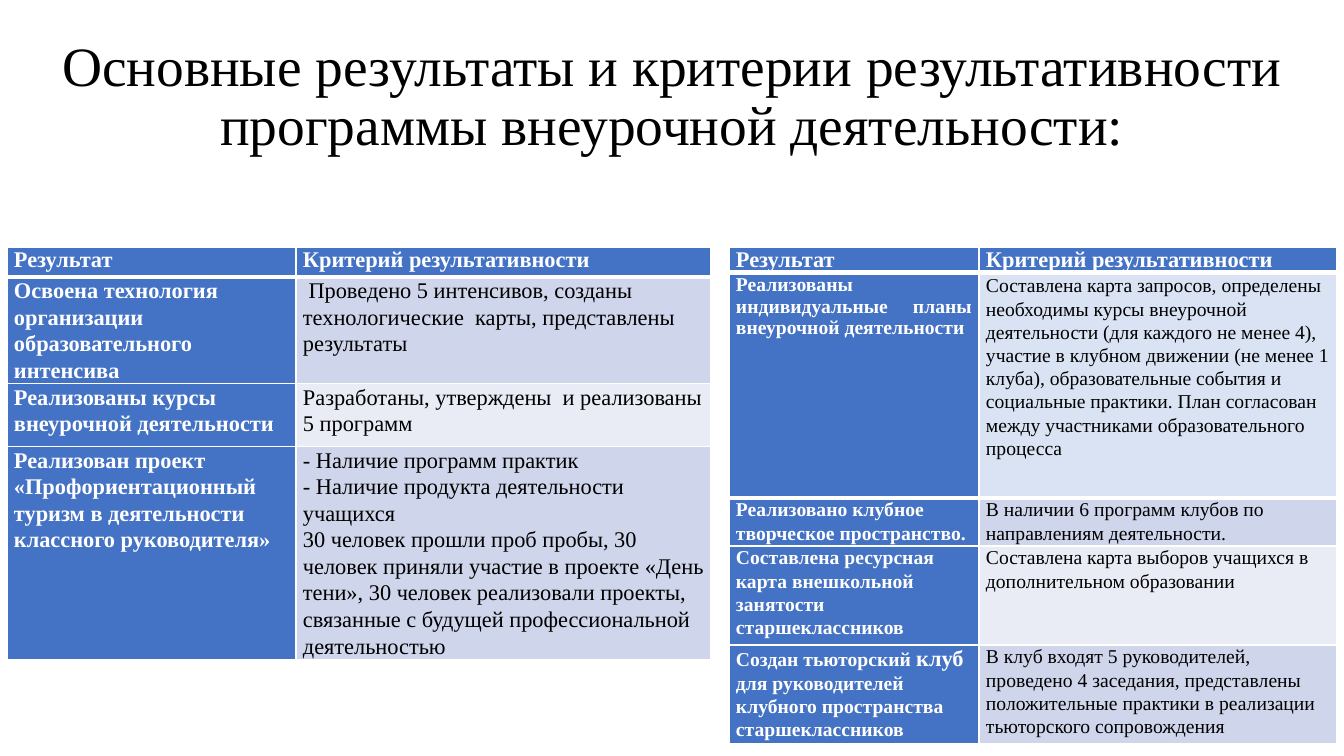
from dataclasses import dataclass

from lxml.etree import fromstring
from pptx import Presentation
from pptx.dml.color import RGBColor
from pptx.enum.text import MSO_ANCHOR, MSO_AUTO_SIZE, PP_ALIGN
from pptx.oxml.ns import nsdecls
from pptx.util import Emu, Pt

COLORS = {
    "white": "FFFFFF",
    "black": "000000",
    "accent": "4472C4",
    "band": "CFD5EA",
    "pale": "E9EBF5",
    "sky": "DAE3F3",
}
EMU_PER_PX = 914400 / 100.8


def px(length):
    return Emu(round(length * EMU_PER_PX))


@dataclass
class Row:
    """One result with its criterion; a "|" in the text encloses an enlarged word."""
    height: int
    result: str
    criterion: str
    shade: str
    heavy: bool = False
    justified: tuple = ()


def header(height):
    return Row(height, "Результат ", "Критерий результативности ", "accent",
               heavy=True, justified=(0, 1))


class SlideBuilder:
    font = "Times New Roman"
    enlarged = 16

    def __init__(self, width, height):
        self.deck = Presentation()
        self.deck.slide_width, self.deck.slide_height = px(width), px(height)
        self.slide = self.deck.slides.add_slide(self.deck.slide_layouts[5])

    def style_run(self, run, size, color, bold=False):
        run.font.name = self.font
        run.font.size = Pt(size)
        run.font.bold = bold
        run.font.color.rgb = RGBColor.from_string(COLORS[color])

    def title(self, left, top, width, height, wording, size):
        heading = self.slide.shapes.title
        heading.left, heading.top = px(left), px(top)
        heading.width, heading.height = px(width), px(height)
        frame = heading.text_frame
        frame.text = wording
        frame.word_wrap = True
        frame.auto_size = MSO_AUTO_SIZE.NONE
        frame.vertical_anchor = MSO_ANCHOR.MIDDLE
        paragraph = frame.paragraphs[0]
        paragraph.alignment = PP_ALIGN.CENTER
        paragraph.line_spacing = 0.9
        self.style_run(paragraph.runs[0], size, "black")

    def table(self, left, top, widths, rows, size):
        table = self.slide.shapes.add_table(
            len(rows), len(widths), px(left), px(top),
            px(sum(widths)), px(sum(row.height for row in rows))).table
        table.first_row = table.horz_banding = False
        for column, width in zip(table.columns, widths):
            column.width = px(width)
        after_heavy = False
        for r, row in enumerate(rows):
            table.rows[r].height = px(row.height)
            for c, wording in enumerate((row.result, row.criterion)):
                cell = table.cell(r, c)
                shade = row.shade if c else "accent"
                self.fill_cell(cell, wording, shade, size, c in row.justified)
                self.border_cell(cell, 3 if after_heavy else 1, 3 if row.heavy else 1)
            after_heavy = row.heavy

    def fill_cell(self, cell, wording, shade, size, justified):
        cell.margin_left = cell.margin_right = px(7)
        cell.margin_top = cell.margin_bottom = 0
        cell.fill.solid()
        cell.fill.fore_color.rgb = RGBColor.from_string(COLORS[shade])
        strong = shade == "accent"
        frame = cell.text_frame
        for i, line in enumerate(wording.split("\n")):
            paragraph = frame.add_paragraph() if i else frame.paragraphs[0]
            if justified:
                paragraph.alignment = PP_ALIGN.JUSTIFY
            else:
                paragraph.line_spacing = 1.07
            for part, piece in enumerate(line.split("|")):
                run = paragraph.add_run()
                run.text = piece
                self.style_run(run, self.enlarged if part % 2 else size,
                               "white" if strong else "black", strong)

    def border_cell(self, cell, top, bottom):
        properties = cell._tc.get_or_add_tcPr()
        for i, (side, width) in enumerate(zip("LRTB", (1, 1, top, bottom))):
            properties.insert(i, fromstring(
                f'<a:ln{side} {nsdecls("a")} w="{Pt(width)}"><a:solidFill>'
                f'<a:srgbClr val="{COLORS["white"]}"/></a:solidFill></a:ln{side}>'))

    def save(self):
        self.deck.save("out.pptx")


def main():
    page = SlideBuilder(1344, 756)
    page.title(32, 25, 1280, 146,
               "Основные результаты и критерии результативности "
               "программы внеурочной деятельности:", 39.6)
    page.table(7, 247, (289, 415), [
        header(30),
        Row(106, "Освоена технология организации образовательного интенсива",
            " Проведено 5 интенсивов, созданы технологические  карты, "
            "представлены результаты", "band"),
        Row(63, "Реализованы курсы внеурочной деятельности",
            "Разработаны, утверждены  и реализованы 5 программ", "pale"),
        Row(213, "Реализован проект «Профориентационный туризм в деятельности "
            "классного руководителя»",
            "- Наличие программ практик\n"
            "- Наличие продукта деятельности учащихся\n"
            "30 человек прошли проб пробы, 30 человек приняли участие в проекте "
            "«День тени», 30 человек реализовали проекты, связанные с будущей "
            "профессиональной деятельностью", "band"),
    ], 16)

    right_widths = (250, 358)
    page.table(729, 247, right_widths, [header(25)], 16)
    page.table(729, 274, right_widths, [
        Row(224, "Реализованы индивидуальные планы внеурочной деятельности",
            "Составлена карта запросов, определены необходимы курсы внеурочной "
            "деятельности (для каждого не менее 4), участие в клубном движении "
            "(не менее 1 клуба), образовательные события и социальные практики. "
            "План согласован между участниками образовательного процесса",
            "sky", heavy=True, justified=(0,)),
        Row(48, "Реализовано клубное творческое пространство.",
            "В наличии 6 программ клубов по направлениям деятельности.", "band"),
        Row(99, "Составлена ресурсная карта внешкольной занятости старшеклассников",
            "Составлена карта выборов учащихся в дополнительном образовании", "pale"),
        Row(99, "Создан тьюторский |клуб| для руководителей клубного пространства "
            "старшеклассников",
            "В клуб входят 5 руководителей, проведено 4 заседания, представлены "
            "положительные практики в реализации тьюторского сопровождения", "band"),
    ], 14)
    page.save()


if __name__ == "__main__":
    main()
